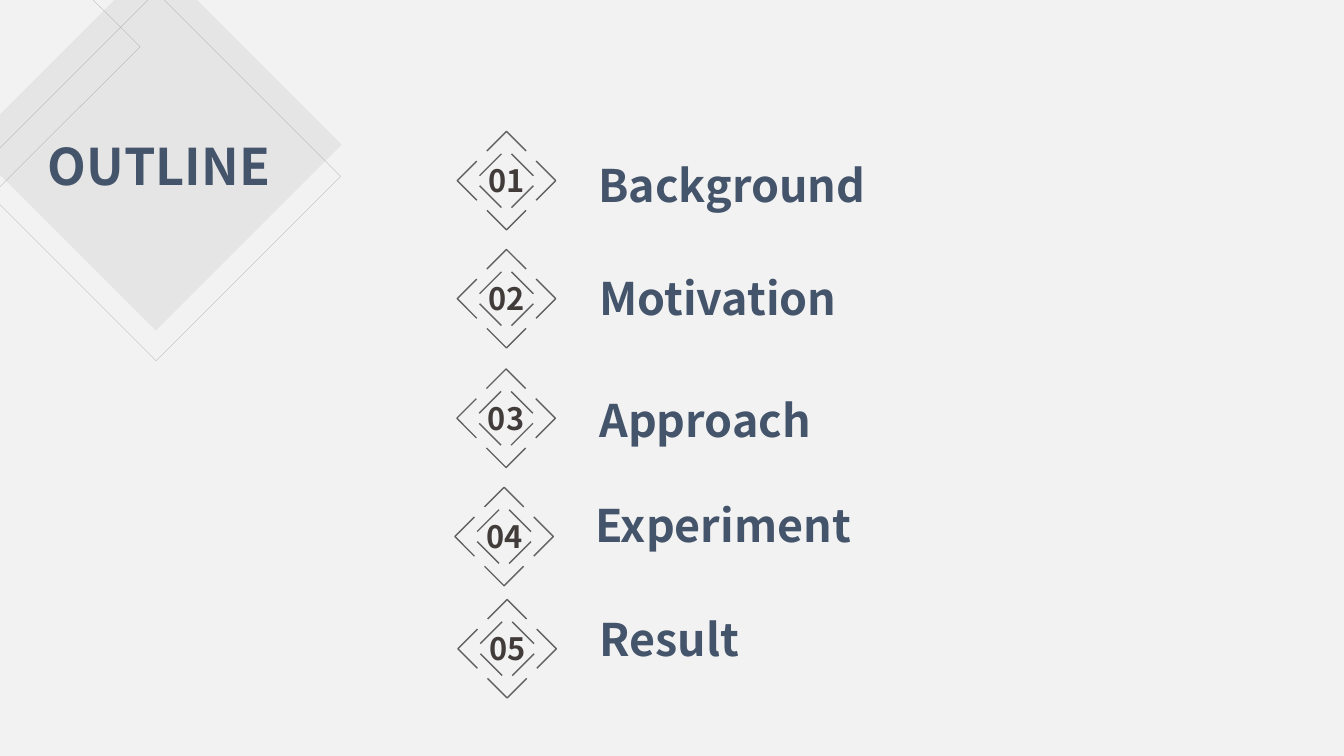
from pptx import Presentation
from pptx.dml.color import RGBColor as Rgb
from pptx.enum.shapes import MSO_SHAPE as Kind
from pptx.enum.text import PP_ALIGN as Align
from pptx.oxml.ns import qn
from pptx.util import Pt
from lxml import etree

FONT = "Noto Sans CJK SC"
NAVY, DARK, GREY = "44546A", "413B39", "616161"
TITLE = ("OUTLINE", (-1.4, 92.9, 229.7, 51.1))

# number, badge centre, label, label box (left, top, height), left and top inset
ITEMS = [
    ("01", (361.8, 129.1), "Background", (396, 104.4, 51.1), (31.4, 8.2)),
    ("02", (361.8, 213.4), "Motivation", (396.7, 185, 51.1), (31.4, 8.2)),
    ("03", (361.5, 298.8), "Approach", (396.7, 272.2, 51.1), (31.4, 8.2)),
    ("04", (360.1, 383.3), "Experiment", (382.3, 352.1, 46.1), (43, 3.6)),
    ("05", (362.3, 463.4), "Result", (396.7, 428.4, 51.1), (31.4, 8.2)),
]
LABEL_W = 271.4
NUM_W, NUM_H = 54, 33.8
TIP, ARM = 35.2, 14          # outer chevrons: tip distance and arm reach
NEAR, FAR = 3.6, 19.2        # inner strokes: distances from the two axes

# box, fill, line
DIAMONDS = [
    ((-21.6, -29.5, 265.7, 265.7), ("A6A6A6", 16), None),
    ((-20.2, -5.8, 263.5, 263.5), None, ("808080", 48)),
]
CORNER = [(-1.4, -67.7), (100.1, 33.4), (-1.4, 134.6)]


def paint(fill, color, alpha=100):
    """Fill with a hex colour, alpha in percent."""
    fill.solid()
    fill.fore_color.rgb = Rgb.from_string(color)
    if alpha < 100:
        node = fill._xPr.find(qn("a:solidFill"))[0]
        etree.SubElement(node, qn("a:alpha")).set("val", str(alpha * 1000))


def style(shape, fill=None, line=None, width=0.25):
    shape.shadow.inherit = False
    for part, look in ((shape.fill, fill), (shape.line.fill, line)):
        if look:
            paint(part, *look)
        else:
            part.background()
    if line:
        shape.line.width = Pt(width)


def trace(shapes, points, close=False, **look):
    """Draw an outline through points."""
    first, *rest = [(Pt(x), Pt(y)) for x, y in points]
    pen = shapes.build_freeform(*first)
    pen.add_line_segments(rest, close=close)
    style(pen.convert_to_shape(), **look)


def write(shapes, text, box, size, color, align=Align.LEFT, inset=(7.2, 3.6)):
    frame = shapes.add_textbox(*map(Pt, box)).text_frame
    left, top = map(Pt, inset)
    for name, value in dict(word_wrap=True, margin_left=left, margin_top=top).items():
        setattr(frame, name, value)
    para = frame.paragraphs[0]
    para.alignment = align
    run = para.add_run()
    run.text = text
    for name, value in dict(name=FONT, size=Pt(size), bold=True).items():
        setattr(run.font, name, value)
    paint(run.font.fill, color)


def badge(shapes, num, mid):
    """Draw a number inside a broken double diamond."""
    group = shapes.add_group_shape().shapes
    cx, cy = mid
    base = TIP - ARM
    chevron = [(-ARM, -base), (0, -TIP), (ARM, -base)]
    stroke = [(NEAR, -FAR), (FAR, -NEAR)]
    for _ in range(4):
        for points in (chevron, stroke):
            trace(group, [(cx + x, cy + y) for x, y in points],
                  line=(GREY,), width=1)
        # quarter turn
        chevron, stroke = ([(-y, x) for x, y in part] for part in (chevron, stroke))
    box = (cx - NUM_W / 2, cy - NUM_H / 2, NUM_W, NUM_H)
    write(group, num, box, 22, DARK, Align.CENTER)


def main():
    deck = Presentation()
    deck.slide_width, deck.slide_height = Pt(960), Pt(540)
    slide = deck.slides.add_slide(deck.slide_layouts[6])
    paint(slide.background.fill, "F2F2F2")
    shapes = slide.shapes
    for box, fill, line in DIAMONDS:
        style(shapes.add_shape(Kind.DIAMOND, *map(Pt, box)), fill, line)
    trace(shapes, CORNER, close=True, line=("808080", 48))
    text, box = TITLE
    write(shapes, text, box, 36, NAVY, Align.CENTER)
    for num, mid, label, (left, top, high), inset in ITEMS:
        badge(shapes, num, mid)
        write(shapes, label, (left, top, LABEL_W, high), 32, NAVY, inset=inset)
    deck.save("out.pptx")


if __name__ == "__main__":
    main()
